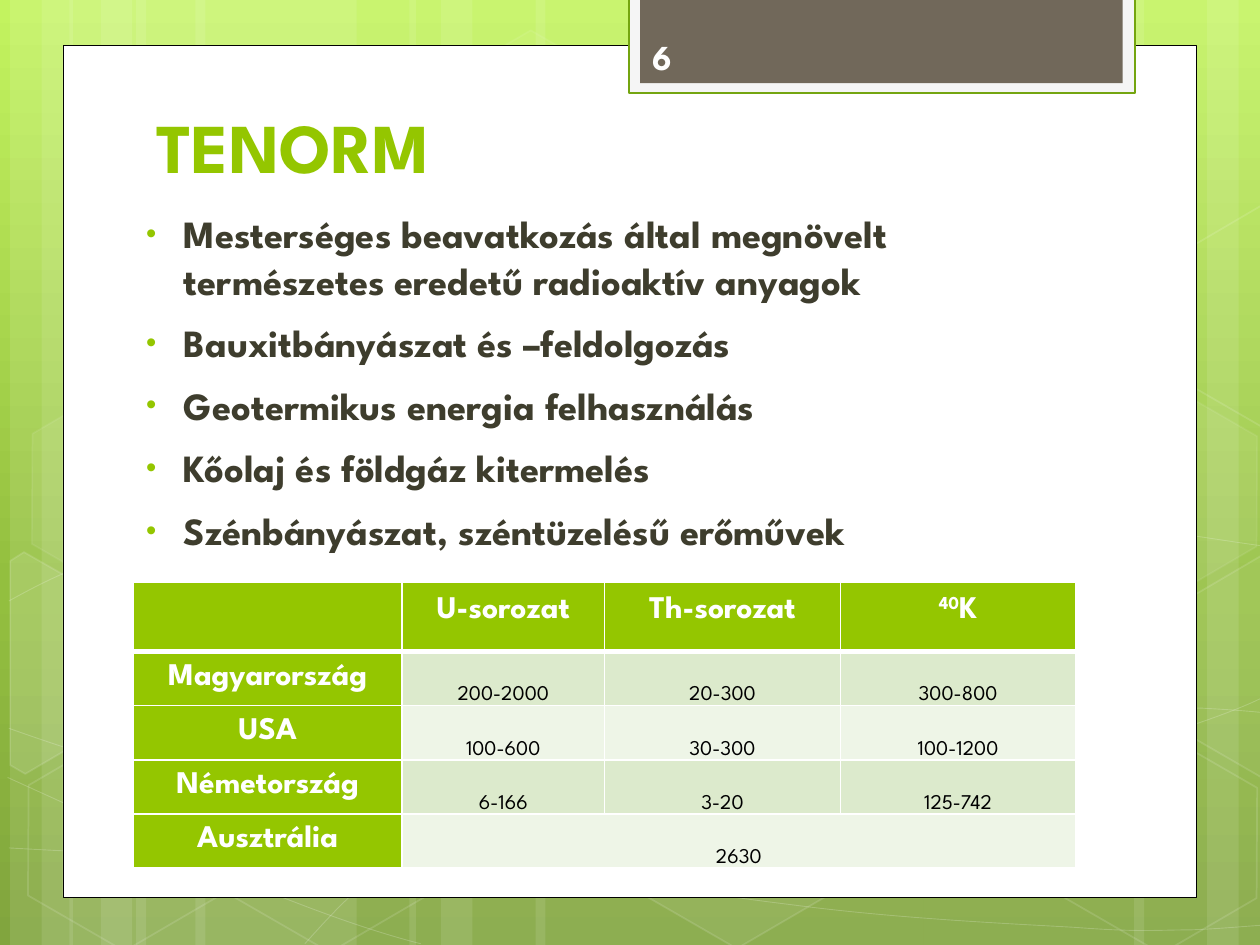
from copy import deepcopy
from math import cos, radians, sin

from lxml import etree
from pptx import Presentation
from pptx.dml.color import RGBColor
from pptx.enum import shapes as kinds, text
from pptx.oxml import parse_xml
from pptx.oxml.ns import nsdecls, qn
from pptx.util import Pt

PX = 9144  # 100 px to the inch
FONT = "League Spartan"
HUES = {
    "white": "FFFFFF", "black": "000000", "lime": "94C600", "ink": "3E3D2D",
    "edge": "74A510", "frame": "F5F5F5", "brown": "71685A", "page": "FEFEFE",
    "odd": "DCEACC", "even": "EEF5E7",
    "top": "C3F35F", "mid": "93BF3F", "low": "81A53E",
}
RGB = {name: RGBColor.from_string(code) for name, code in HUES.items()}
RECT, HEX = kinds.MSO_SHAPE.RECTANGLE, kinds.MSO_SHAPE.HEXAGON


def paint(shape, fill=None, line=None, width=1, clear=(100, 100)):
    """Set fill and line by colour name; clear holds their opacities in percent."""
    shape.shadow.inherit = False
    for part, hue, rate in ((shape.fill, fill, clear[0]), (shape.line.fill, line, clear[1])):
        if hue is None:
            part.background()
            continue
        part.solid()
        part.fore_color.rgb = RGB[hue]
        if rate < 100:
            holder = shape.element.spPr
            if part is not shape.fill:
                holder = holder.find(qn("a:ln"))
            color = holder.find(qn("a:solidFill"))[0]
            etree.SubElement(color, qn("a:alpha")).set("val", str(rate * 1000))
    if line:
        shape.line.width = Pt(width)


def style(para, size, hue, bold=True):
    font = para.font
    font.name, font.size, font.bold = FONT, Pt(size), bold
    font.color.rgb = RGB[hue]


prs = Presentation()
prs.slide_width, prs.slide_height = 1000 * PX, 750 * PX
slide = prs.slides.add_slide(prs.slide_layouts[1])
items = slide.shapes

# Background gradient
back = slide.background.fill
back.gradient()
back.gradient_angle = 270
stops = slide.element.xpath(".//a:gsLst")[0]
stops.append(deepcopy(stops[0]))
for stop, (place, hue) in zip(back.gradient_stops, ((0, "top"), (0.62, "mid"), (1, "low"))):
    stop.position = place
    stop.color.rgb = RGB[hue]

# Pale vertical stripes: left, width, turn
stripes = [(108, 175, 0), (8, 50, 0), (33, 83, 0), (155, 175, 0), (55, 50, 0), (80, 83, 0),
           (733, 175, 180), (958, 50, 180), (900, 83, 180),
           (425, 308, 0), (325, 50, 0), (350, 83, 0)]
for x, w, turn in stripes:
    stripe = items.add_shape(RECT, x * PX, 0, w * PX, 750 * PX)
    stripe.rotation = turn
    paint(stripe, "white", clear=(10, 100))

# Thin curves: a start, then two handles and an end for each Bezier piece
curves = [
    [(7, 673), (61, 676), (115, 679), (190, 678), (265, 677), (358, 675), (458, 665),
     (558, 655), (700, 636), (792, 617), (883, 598), (977, 568), (1007, 551)],
    [(7, 477), (36, 461), (65, 446), (121, 431), (178, 416), (259, 394), (347, 387),
     (436, 380), (544, 379), (654, 387), (764, 395), (947, 426), (1007, 434)],
    [(6, 617), (127, 672), (247, 727), (334, 749)],
    [(7, 578), (38, 589), (70, 600), (128, 616), (186, 631), (273, 656), (357, 673),
     (440, 690), (545, 708), (628, 718), (711, 729), (800, 733), (853, 736),
     (905, 740), (919, 738), (945, 738), (971, 737), (989, 735), (1007, 734)],
    [(242, 749), (260, 729), (278, 709), (302, 691), (326, 673), (360, 653), (388, 639),
     (416, 625), (433, 619), (470, 609), (506, 599), (573, 585), (608, 578),
     (644, 571), (649, 571), (680, 569), (711, 566), (760, 563), (794, 562),
     (829, 561), (886, 562), (886, 562), (908, 562), (931, 562), (953, 562),
     (971, 563), (988, 564), (1006, 566)],
]
for knots in curves:
    pen = items.build_freeform(*knots[0], scale=PX)
    pen.add_line_segments(knots[1:], close=False)
    curve = pen.convert_to_shape()
    legs = curve.element.xpath(".//a:lnTo")
    for i in range(0, len(legs), 3):
        bend = etree.Element(qn("a:cubicBezTo"))
        legs[i].addprevious(bend)
        for leg in legs[i:i + 3]:
            bend.append(leg[0])
            leg.getparent().remove(leg)
    paint(curve, None, "white", 0.5, (100, 20))

# Hexagons: left, top, fill opacity, line opacity
for x, y, body, rim in [(334, 36, 4, 8), (497, 589, 6, 12), (11, 591, 0, 12),
                        (14, 312, 7, 8), (174, 592, 0, 12), (753, 453, 10, 12),
                        (834, 593, 0, 12), (834, 314, 7, 8)]:
    cell = items.add_shape(HEX, x * PX, y * PX, 175 * PX, 152 * PX)
    cell.rotation = 30
    cell.adjustments[0] = 0.285
    paint(cell, "white" if body else None, "white", 1, (body, rim))

# Hexagons cut off by the slide's edge: fill opacity, centre, corners as seen
cuts = [
    (10, (36, 535), [(8, 445), (19, 438), (96, 482), (95, 570), (20, 614), (8, 607)]),
    (4, (985, 520), [(926, 485), (1001, 441), (1009, 446), (1009, 613), (1002, 617), (926, 573)]),
    (0, (985, 241), [(926, 207), (1001, 163), (1010, 168), (1009, 335), (1002, 339), (926, 295)]),
]
C, S = cos(radians(30)), sin(radians(30))
for body, (mx, my), seen in cuts:
    dots = [((mx + (x - mx) * C + (y - my) * S) * PX,
             (my - (x - mx) * S + (y - my) * C) * PX) for x, y in seen]
    pen = items.build_freeform(*dots[0])
    pen.add_line_segments(dots[1:])
    cell = pen.convert_to_shape()
    cell.rotation = 30
    paint(cell, "white" if body else None, "white", 1, (body, 12))

# Page panel and number tab
for x, y, w, h, fill, line, width in [(50, 36, 900, 676, "white", "black", 0.5),
                                      (499, -2, 402, 76, "frame", "edge", 1.25),
                                      (508, -2, 383, 68, "brown", None, 0)]:
    paint(items.add_shape(RECT, x * PX, y * PX, w * PX, h * PX), fill, line, width)

# Title and list, brought in front of the panel
title, body = items.title, slide.placeholders[1]
for holder, (x, y, w, h) in ((title, (114, 29, 768, 125)), (body, (98, 162, 764, 452))):
    holder.left, holder.top, holder.width, holder.height = x * PX, y * PX, w * PX, h * PX
    items.element.append(holder.element)
    holder.text_frame.auto_size = text.MSO_AUTO_SIZE.NONE
title.text_frame.text = "TENORM"
title.text_frame.vertical_anchor = text.MSO_ANCHOR.BOTTOM
head = title.text_frame.paragraphs[0]
head.alignment = text.PP_ALIGN.LEFT
style(head, 40, "lime")

body.text_frame.text = "\n".join([
    "Mesterséges beavatkozás által megnövelt természetes eredetű radioaktív anyagok",
    "Bauxitbányászat és –feldolgozás",
    "Geotermikus energia felhasználás",
    "Kőolaj és földgáz kitermelés",
    "Szénbányászat, széntüzelésű erőművek",
])
for para in body.text_frame.paragraphs:
    para.space_after = Pt(5)
    props = para._p.get_or_add_pPr()
    props.set("marL", str(38 * PX))
    props.set("indent", str(-30 * PX))
    color = etree.SubElement(props, qn("a:buClr"))
    etree.SubElement(color, qn("a:srgbClr")).set("val", HUES["lime"])
    etree.SubElement(props, qn("a:buSzPct")).set("val", "76000")
    etree.SubElement(props, qn("a:buChar")).set("char", "•")
    style(para, 22, "ink")

# Page number
page = items.add_textbox(508 * PX, 25 * PX, 146 * PX, 40 * PX).text_frame
page.word_wrap = True
page.vertical_anchor = text.MSO_ANCHOR.MIDDLE
page.text = "6"
style(page.paragraphs[0], 20, "page")

# Table
rows = [
    ["", "U-sorozat", "Th-sorozat", "40K"],
    ["Magyarország", "200-2000", "20-300", "300-800"],
    ["USA", "100-600", "30-300", "100-1200"],
    ["Németország", "6-166", "3-20", "125-742"],
    ["Ausztrália", "2630", "", ""],
]
widths, heights = [213, 161, 187, 187], [55, 43, 43, 43, 43]
grid = items.add_table(len(rows), len(widths), 106 * PX, 462 * PX,
                       sum(widths) * PX, sum(heights) * PX).table
for col, w in zip(grid.columns, widths):
    col.width = w * PX
for row, h in zip(grid.rows, heights):
    row.height = h * PX
grid.cell(4, 1).merge(grid.cell(4, 3))
for r, words in enumerate(rows):
    for c, word in enumerate(words):
        cell = grid.cell(r, c)
        label = r == 0 or c == 0
        for side in "LRTB":
            thick = 3 if (r, side) in ((0, "B"), (1, "T")) else 1
            cell._tc.get_or_add_tcPr().append(parse_xml(
                f'<a:ln{side} {nsdecls("a")} w="{Pt(thick)}"><a:solidFill>'
                f'<a:srgbClr val="{HUES["white"]}"/></a:solidFill></a:ln{side}>'))
        cell.fill.solid()
        cell.fill.fore_color.rgb = RGB["lime" if label else "odd" if r % 2 else "even"]
        cell.margin_left = cell.margin_right = 7 * PX
        cell.margin_top = cell.margin_bottom = 0
        cell.vertical_anchor = text.MSO_ANCHOR.TOP if label else text.MSO_ANCHOR.BOTTOM
        para = cell.text_frame.paragraphs[0]
        para.alignment = text.PP_ALIGN.CENTER
        para.line_spacing = 1.4 if r and label else 1.5
        style(para, 18 if label else 12, "white" if label else "black", label)
        if word == "40K":
            mass = para.add_run()
            mass.text, word = "40", "K"
            mass._r.get_or_add_rPr().set("baseline", "30000")
        if word:
            para.add_run().text = word

prs.save("out.pptx")
